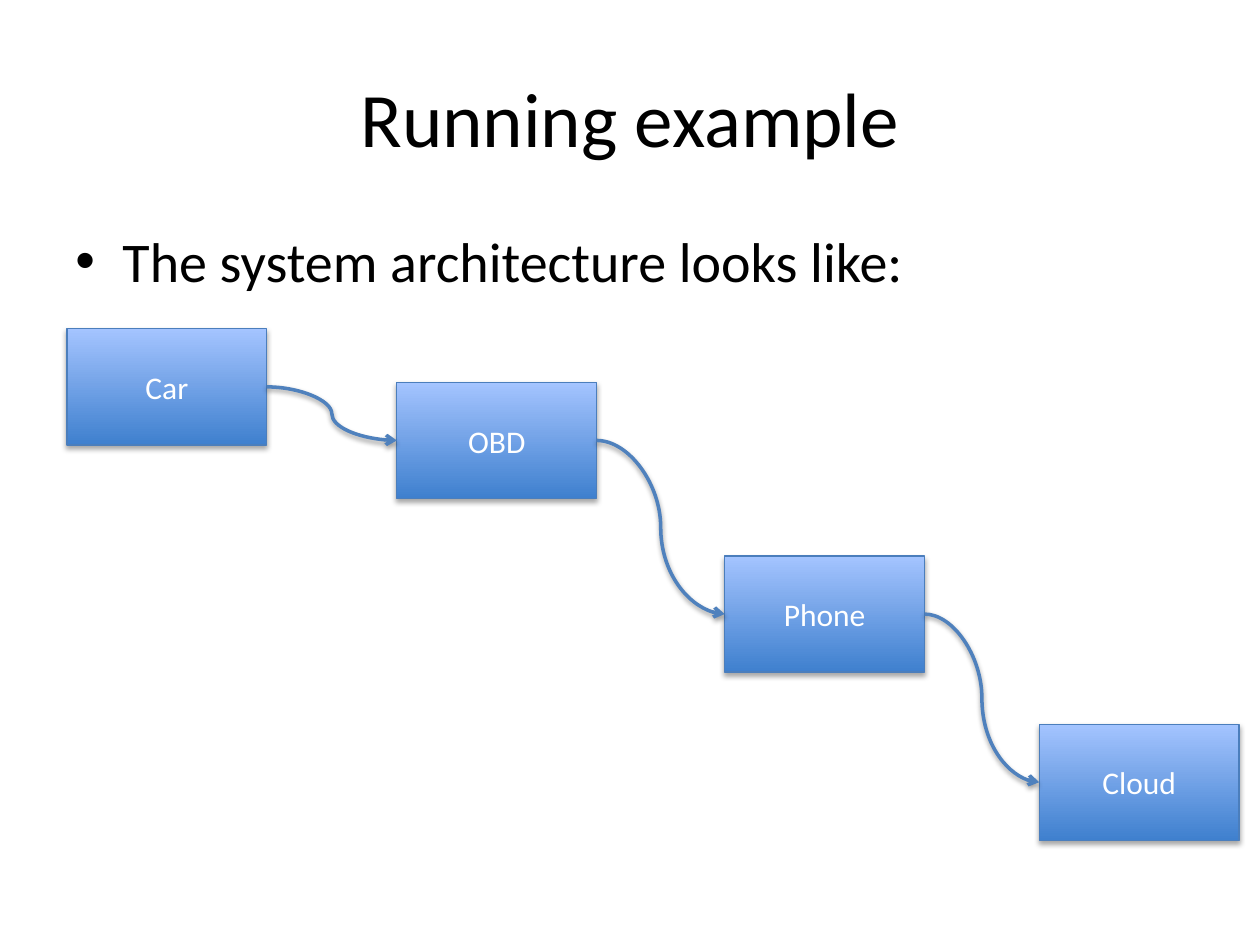
from dataclasses import dataclass

from lxml import etree
from pptx import Presentation
from pptx.dml.color import RGBColor
from pptx.enum.shapes import MSO_CONNECTOR, MSO_SHAPE
from pptx.enum.text import MSO_ANCHOR, PP_ALIGN
from pptx.oxml.ns import qn
from pptx.util import Cm, Pt

CURVE = MSO_CONNECTOR.CURVE
RECTANGLE = MSO_SHAPE.RECTANGLE
TOP, MIDDLE = MSO_ANCHOR.TOP, MSO_ANCHOR.MIDDLE
LEFT, CENTER = PP_ALIGN.LEFT, PP_ALIGN.CENTER
LEFT_SITE, RIGHT_SITE = 1, 3

FONT = "Calibri"
COLORS = {
    "text": "000000",
    "node_text": "FFFFFF",
    "node_bottom": "3F80CE",
    "node_top": "A4C4FF",
    "node_line": "4B7EBC",
    "arrow": "4F81BD",
    "shadow": "000000",
}
NODE_WIDTH, NODE_HEIGHT = Cm(4.03), Cm(2.34)


@dataclass
class Node:
    label: str
    left: float
    top: float


NODES = [
    Node("Car", 1.35, 6.63),
    Node("OBD", 8, 7.71),
    Node("Phone", 14.61, 11.21),
    Node("Cloud", 20.95, 14.6),
]


def rgb(name: str) -> RGBColor:
    return RGBColor.from_string(COLORS[name])


def write_text(shape, text: str, size: float, color: str, align, anchor):
    frame = shape.text_frame
    frame.word_wrap = True
    frame.vertical_anchor = anchor
    para = frame.paragraphs[0]
    para.alignment = align
    span = para.add_run()
    span.text = text
    for name, value in {"name": FONT, "size": Pt(size)}.items():
        setattr(span.font, name, value)
    span.font.color.rgb = rgb(color)
    return para


def add_text(page, text: str, size: float, top: float, height: float, align, anchor):
    box = page.shapes.add_textbox(Cm(1.27), Cm(top), Cm(22.86), Cm(height))
    return write_text(box, text, size, "text", align, anchor)


def add_bullet(para) -> None:
    properties = para._p.get_or_add_pPr()
    for name, value in {"marL": Cm(0.95), "indent": -Cm(0.95)}.items():
        properties.set(name, str(int(value)))
    etree.SubElement(properties, qn("a:buFont"), typeface="Arial")
    etree.SubElement(properties, qn("a:buChar"), char="•")


def add_shadow(shape, distance: float, opacity: int) -> None:
    """Cast a soft shadow straight down; distance in points, opacity in percent."""
    effects = etree.SubElement(shape._element.spPr, qn("a:effectLst"))
    shadow = etree.SubElement(
        effects, qn("a:outerShdw"), blurRad=str(Pt(3.1)), dist=str(Pt(distance)),
        dir="5400000", rotWithShape="0",
    )
    color = etree.SubElement(shadow, qn("a:srgbClr"), val=COLORS["shadow"])
    etree.SubElement(color, qn("a:alpha"), val=str(opacity * 1000))


def add_node(page, node: Node):
    box = page.shapes.add_shape(
        RECTANGLE, Cm(node.left), Cm(node.top), NODE_WIDTH, NODE_HEIGHT
    )
    box.fill.gradient()
    box.fill.gradient_angle = 90
    for stop, color in zip(box.fill.gradient_stops, ("node_bottom", "node_top")):
        stop.color.rgb = rgb(color)
    box.line.color.rgb = rgb("node_line")
    box.line.width = Pt(0.75)
    add_shadow(box, 1.8, 35)
    write_text(box, node.label, 18, "node_text", CENTER, MIDDLE)
    return box


def add_arrow(page, source, target) -> None:
    arrow = page.shapes.add_connector(CURVE, 0, 0, 0, 0)
    arrow.begin_connect(source, RIGHT_SITE)
    arrow.end_connect(target, LEFT_SITE)
    arrow.line.color.rgb = rgb("arrow")
    arrow.line.width = Pt(2)
    etree.SubElement(arrow.line._get_or_add_ln(), qn("a:tailEnd"), type="arrow")
    add_shadow(arrow, 1.6, 38)


def main() -> None:
    deck = Presentation()
    deck.slide_width, deck.slide_height = Cm(25.4), Cm(19.05)
    page = deck.slides.add_slide(deck.slide_layouts[6])

    add_text(page, "Running example", 44, 0.76, 3.18, CENTER, MIDDLE)
    intro = add_text(
        page, "The system architecture looks like:", 32, 4.45, 2.54, LEFT, TOP
    )
    add_bullet(intro)

    boxes = [add_node(page, node) for node in NODES]
    for source, target in zip(boxes, boxes[1:]):
        add_arrow(page, source, target)

    deck.save("out.pptx")


if __name__ == "__main__":
    main()
